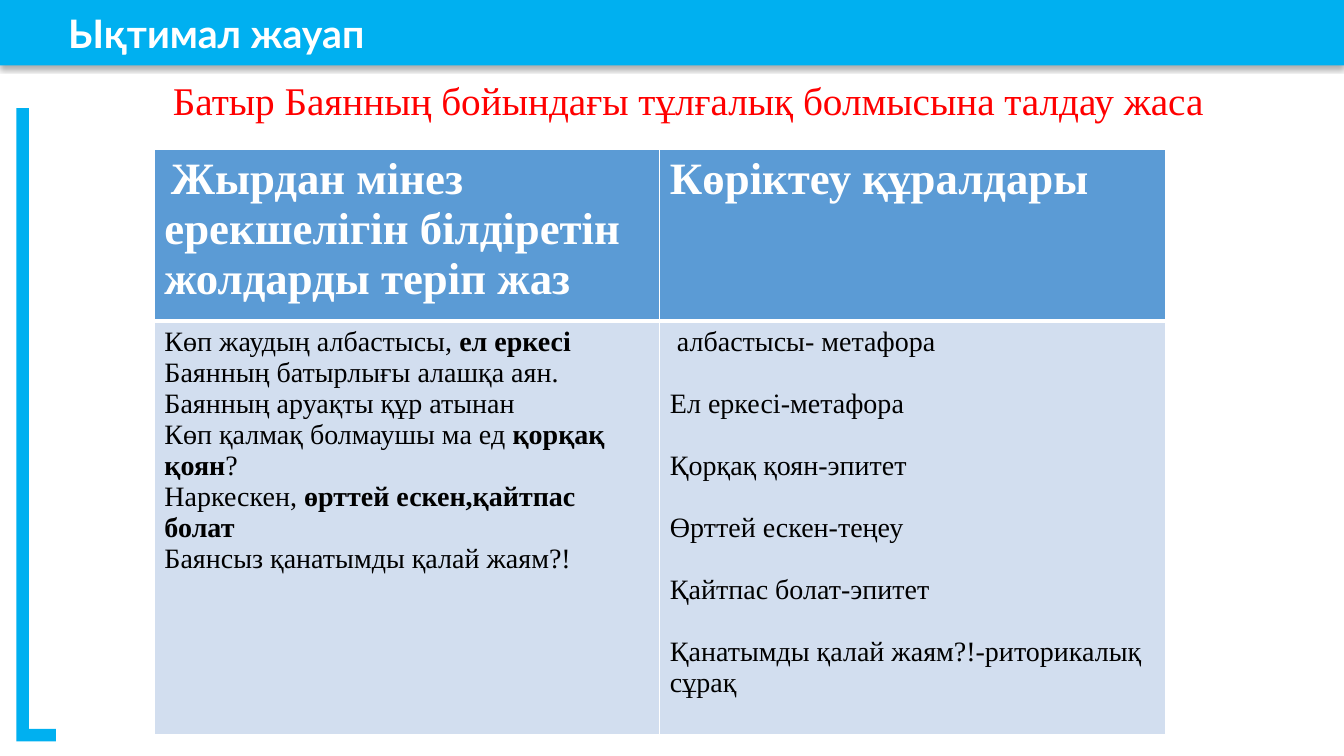
from lxml.etree import SubElement
from pptx import Presentation
from pptx.dml.color import RGBColor
from pptx.enum.shapes import MSO_SHAPE
from pptx.enum.text import MSO_ANCHOR, PP_ALIGN
from pptx.oxml.ns import qn
from pptx.util import Cm, Pt

COLORS = {
    "banner": "00B0F0",
    "heading": "FF0000",
    "header": "5B9BD5",
    "body": "D2DEEF",
    "white": "FFFFFF",
    "black": "000000",
}
SERIF = "Times New Roman"
HEADERS = [" *Жырдан мінез ерекшелігін білдіретін жолдарды теріп жаз", "Көріктеу құралдары"]
POEM_LINES = [
    "Көп жаудың албастысы, *ел еркесі",
    "Баянның батырлығы алашқа аян.",
    "Баянның аруақты құр атынан",
    "Көп қалмақ болмаушы ма ед *қорқақ қоян*?",
    "Наркескен, *өрттей ескен,қайтпас болат",
    "Баянсыз қанатымды қалай жаям?!",
]
DEVICES = [
    " албастысы- метафора",
    "Ел еркесі-метафора",
    "Қорқақ қоян-эпитет",
    "Өрттей ескен-теңеу",
    "Қайтпас болат-эпитет",
    "Қанатымды қалай жаям?!-риторикалық сұрақ",
]


def rgb(name):
    return RGBColor.from_string(COLORS[name])


def style(font, face, size, color, bold=None):
    font.name = face
    font.size = Pt(size)
    font.color.rgb = rgb(color)
    font.bold = bold


def write_lines(frame, lines, size, color, bold=False, gap=0):
    for number, line in enumerate(lines):
        paragraph = frame.paragraphs[0] if number == 0 else frame.add_paragraph()
        if number and gap:
            paragraph.space_before = Pt(gap)
        style(paragraph.font, SERIF, size, color, bold)
        for position, part in enumerate(line.split("*")):
            run = paragraph.add_run()
            run.text = part
            if position % 2:
                run.font.bold = True


def add_block(slide, preset, left, top, width, height):
    block = slide.shapes.add_shape(preset, Cm(left), Cm(top), Cm(width), Cm(height))
    block.shadow.inherit = False
    block.fill.solid()
    block.fill.fore_color.rgb = rgb("banner")
    block.line.fill.background()
    return block


def add_drop_shadow(block):
    effects = block._element.spPr.find(qn("a:effectLst"))
    shadow = SubElement(effects, qn("a:outerShdw"), blurRad=str(Pt(3.5)),
                        dist=str(Pt(2.2)), dir="5400000", algn="t", rotWithShape="0")
    tint = SubElement(shadow, qn("a:srgbClr"), val=COLORS["black"])
    SubElement(tint, qn("a:alpha"), val="32000")


def add_banner(slide, title):
    banner = add_block(slide, MSO_SHAPE.RECTANGLE, 0, 0, 33.87, 1.65)
    add_drop_shadow(banner)
    frame = banner.text_frame
    frame.word_wrap = True
    frame.vertical_anchor = MSO_ANCHOR.MIDDLE
    frame.margin_left = Cm(1.72)
    paragraph = frame.paragraphs[0]
    paragraph.alignment = PP_ALIGN.LEFT
    style(paragraph.font, "Lato", 28, "white", True)
    paragraph.add_run().text = title


def add_bracket(slide):
    bracket = add_block(slide, MSO_SHAPE.BENT_UP_ARROW, -6.99, 10.13, 15.8, 0.99)
    bracket.rotation = 90
    for index, value in enumerate([0.317, 0, 0]):
        bracket.adjustments[index] = value


def add_heading(slide, text):
    heading = slide.shapes.add_textbox(Cm(4.11), Cm(1.8), Cm(27.38), Cm(1.45))
    heading.text_frame.word_wrap = True
    write_lines(heading.text_frame, [text], 28, "heading")


def format_cell(cell, fill, bottom):
    properties = cell._tc.get_or_add_tcPr()
    for side, width in [("L", 1), ("R", 1), ("T", 1), ("B", bottom)]:
        border = SubElement(properties, qn(f"a:ln{side}"), w=str(Pt(width)))
        paint = SubElement(border, qn("a:solidFill"))
        SubElement(paint, qn("a:srgbClr"), val=COLORS["white"])
    cell.fill.solid()
    cell.fill.fore_color.rgb = rgb(fill)


def add_analysis(slide):
    table = slide.shapes.add_table(2, 2, Cm(3.89), Cm(3.77), Cm(25.48), Cm(14.74)).table
    table.rows[0].height, table.rows[1].height = Cm(4.32), Cm(10.42)
    for column, header in enumerate(HEADERS):
        cell = table.cell(0, column)
        format_cell(cell, "header", 3)
        write_lines(cell.text_frame, [header], 32, "white", True)
    indent = table.cell(0, 0).text_frame.paragraphs[0].runs[0].font
    indent.name, indent.size = "Calibri", Pt(20)
    for column, (lines, gap) in enumerate([(POEM_LINES, 0), (DEVICES, 22.2)]):
        cell = table.cell(1, column)
        format_cell(cell, "body", 1)
        write_lines(cell.text_frame, lines, 20, "black", gap=gap)


def main():
    deck = Presentation()
    deck.slide_width, deck.slide_height = Cm(33.87), Cm(19.05)
    slide = deck.slides.add_slide(deck.slide_layouts[6])
    add_banner(slide, "Ықтимал жауап")
    add_bracket(slide)
    add_heading(slide, "Батыр Баянның бойындағы тұлғалық болмысына талдау жаса")
    add_analysis(slide)
    deck.save("out.pptx")


if __name__ == "__main__":
    main()
